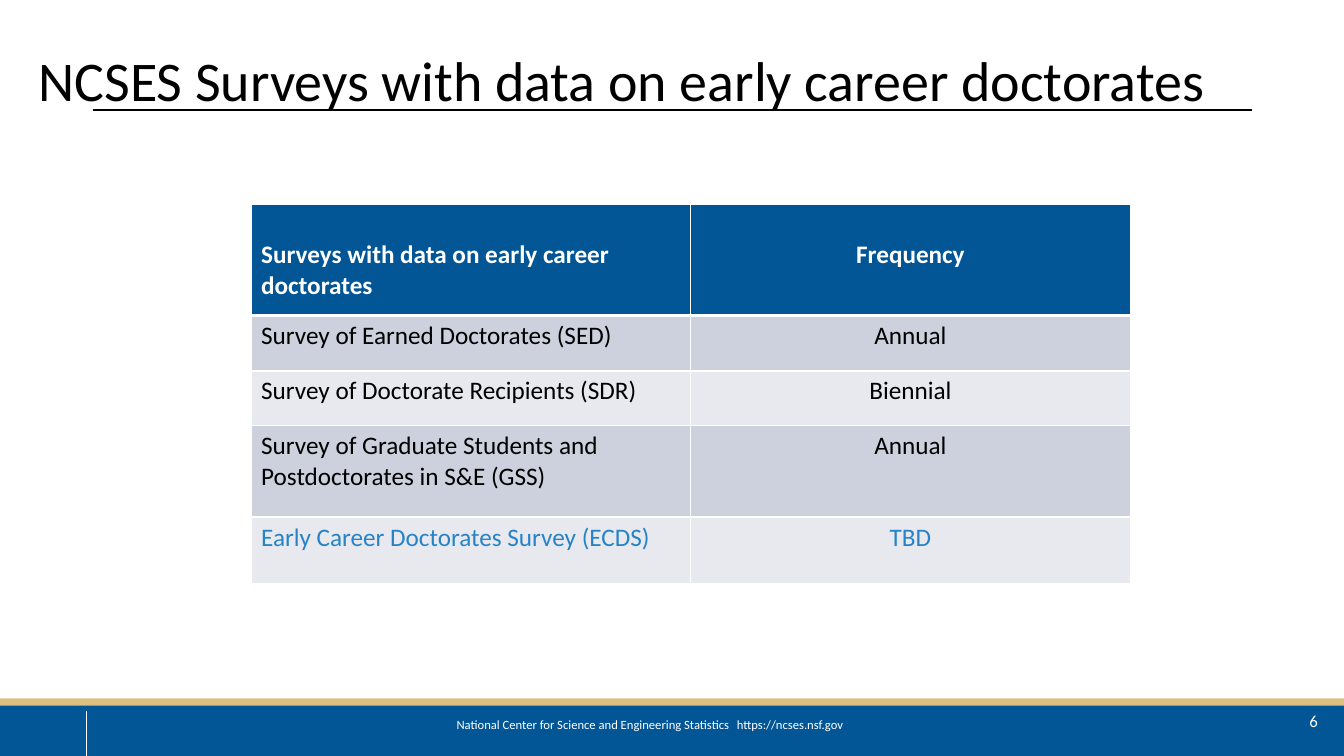
from lxml.etree import SubElement
from pptx import Presentation
from pptx.dml.color import RGBColor
from pptx.enum.shapes import MSO_CONNECTOR, MSO_SHAPE
from pptx.enum.text import MSO_ANCHOR, PP_ALIGN
from pptx.oxml.ns import qn
from pptx.util import Pt

PX = 9144  # 100 px to the inch
BLUE, GOLD, WHITE, BLACK = "025695", "DCC081", "FFFFFF", "000000"
BANDS = ["CCD1DD", "E7E9EF"]
HIGHLIGHT = "2683C6"


def rgb(value):
    return RGBColor.from_string(value)


def write(tf, text, size=18, color=BLACK, bold=False, align=PP_ALIGN.LEFT,
          anchor=MSO_ANCHOR.TOP, spacing=None, tab=None):
    tf.word_wrap = True
    tf.vertical_anchor = anchor
    p = tf.paragraphs[0]
    p.alignment = align
    if spacing:
        p.line_spacing = spacing
    if tab:
        tabs = SubElement(p._p.get_or_add_pPr(), qn("a:tabLst"))
        SubElement(tabs, qn("a:tab"), pos=str(tab * PX), algn="l")
    r = p.add_run()
    r.text = text
    r.font.name = "Calibri"
    r.font.size = Pt(size)
    r.font.bold = bold
    r.font.color.rgb = rgb(color)


prs = Presentation()
prs.slide_width, prs.slide_height = 1333 * PX, 750 * PX
s = prs.slides.add_slide(prs.slide_layouts[5])

# Title
title = s.shapes.title
title.left, title.top, title.width, title.height = [v * PX for v in (-29, 19, 1291, 127)]
write(title.text_frame, "NCSES Surveys with data on early career doctorates", size=40,
      align=PP_ALIGN.CENTER, anchor=MSO_ANCHOR.MIDDLE, spacing=0.9)

# Footer bands
for top, height, color in [(698, 52, BLUE), (693, 7, GOLD)]:
    sp = s.shapes.add_shape(MSO_SHAPE.RECTANGLE, 0, top * PX, prs.slide_width, height * PX)
    sp.shadow.inherit = False
    sp.fill.solid()
    sp.fill.fore_color.rgb = rgb(color)
    sp.line.fill.background()

# Footer divider and title rule
for x1, y1, x2, y2, color, width in [(85, 705, 85, 750, WHITE, 0.25),
                                     (92, 109, 1242, 109, BLACK, 1)]:
    line = s.shapes.add_connector(MSO_CONNECTOR.STRAIGHT, x1 * PX, y1 * PX, x2 * PX, y2 * PX)
    line.line.color.rgb = rgb(color)
    line.line.width = Pt(width)
    SubElement(line._element.spPr, qn("a:effectLst"))

# Footer text and slide number
footer = s.shapes.add_textbox(443 * PX, 708 * PX, 450 * PX, 52 * PX)
write(footer.text_frame,
      "National Center for Science and Engineering Statistics\thttps://ncses.nsf.gov",
      size=9, color=WHITE, spacing=0.9, tab=278)
number = s.shapes.add_textbox(942 * PX, 695 * PX, 375 * PX, 40 * PX)
write(number.text_frame, "6", size=12, color=WHITE, align=PP_ALIGN.RIGHT,
      anchor=MSO_ANCHOR.MIDDLE)

# Survey table
rows = [
    ("Surveys with data on early career doctorates", "Frequency", 110),
    ("Survey of Earned Doctorates (SED)", "Annual", 55),
    ("Survey of Doctorate Recipients (SDR)", "Biennial", 54),
    ("Survey of Graduate Students and Postdoctorates in S&E (GSS)", "Annual", 91),
    ("Early Career Doctorates Survey (ECDS)", "TBD", 66),
]
table = s.shapes.add_table(len(rows), 2, 249 * PX, 203 * PX, 872 * PX, 376 * PX).table
for i, (survey, frequency, height) in enumerate(rows):
    table.rows[i].height = height * PX
    header, last = i == 0, i == len(rows) - 1
    color = WHITE if header else HIGHLIGHT if last else BLACK
    for j, text in enumerate((survey, frequency)):
        cell = table.cell(i, j)
        if header:
            cell.margin_top = 35 * PX
        write(cell.text_frame, text, color=color, bold=header,
              align=PP_ALIGN.CENTER if j else PP_ALIGN.LEFT)
        # White borders, thicker under the header
        borders = {"L": 1, "R": 1, "T": 3 if i == 1 else 1, "B": 3 if header else 1}
        for side, width in borders.items():
            ln = SubElement(cell._tc.get_or_add_tcPr(), qn(f"a:ln{side}"), w=str(Pt(width)))
            SubElement(SubElement(ln, qn("a:solidFill")), qn("a:srgbClr"), val=WHITE)
        cell.fill.solid()
        cell.fill.fore_color.rgb = rgb(BLUE if header else BANDS[(i - 1) % 2])

prs.save("out.pptx")
